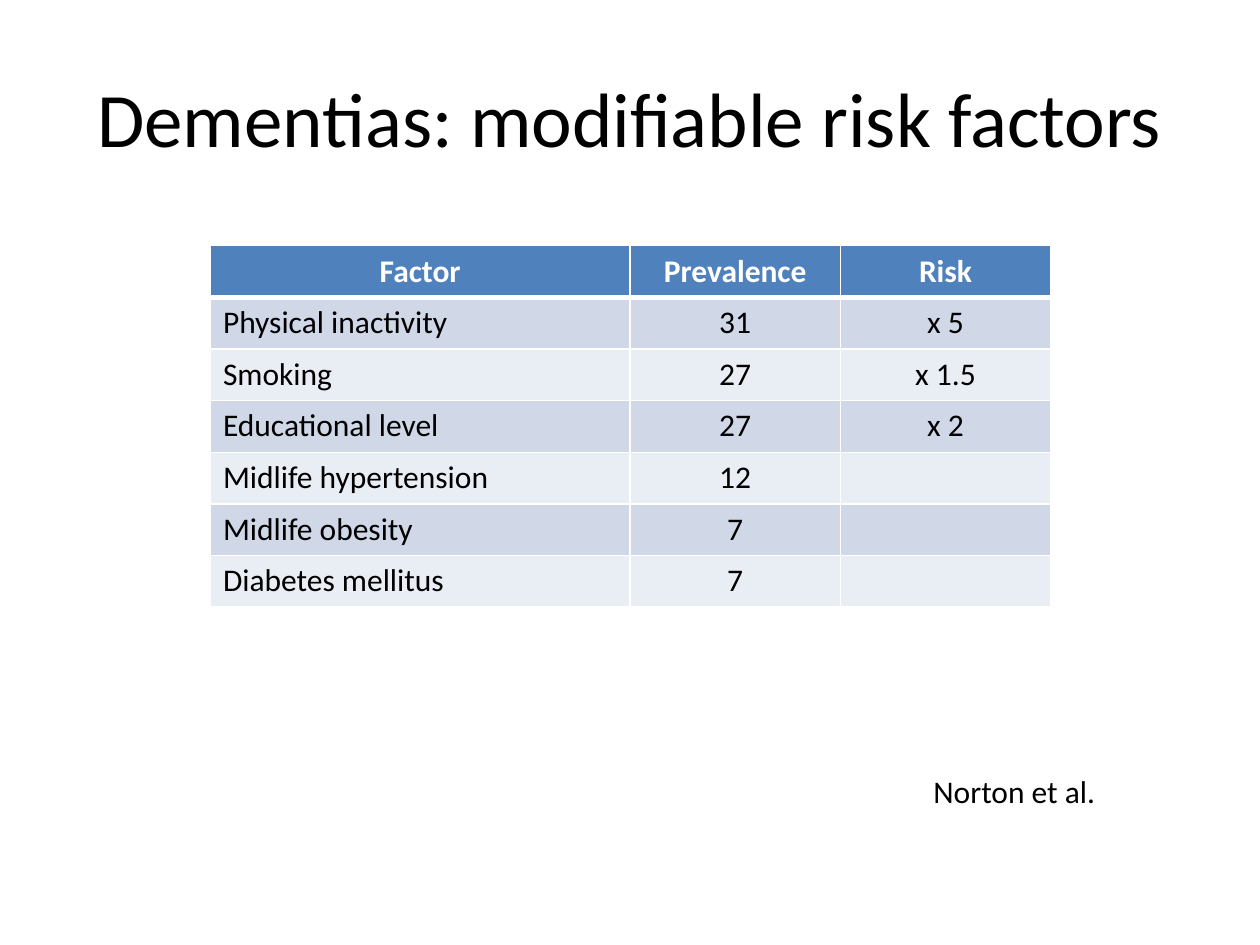
from typing import NamedTuple

from lxml import etree
from pptx import Presentation
from pptx import util as u
from pptx.dml.color import RGBColor
from pptx.enum import text
from pptx.oxml import ns

FONT = "Calibri"
BLACK, WHITE = "000000", "FFFFFF"
HEADER_FILL = "4F81BD"
BAND_FILLS = ("D0D8E8", "E9EDF4")
LEFT, CENTER = text.PP_ALIGN.LEFT, text.PP_ALIGN.CENTER


class RiskFactor(NamedTuple):
    name: str
    prevalence: str
    risk: str = ""


HEADER = RiskFactor("Factor", "Prevalence", "Risk")
FACTORS = [
    RiskFactor("Physical inactivity", "31", "x 5"),
    RiskFactor("Smoking", "27", "x 1.5"),
    RiskFactor("Educational level", "27", "x 2"),
    RiskFactor("Midlife hypertension", "12"),
    RiskFactor("Midlife obesity", "7"),
    RiskFactor("Diabetes mellitus", "7"),
]
COLUMN_WIDTHS = (3.33, 1.67, 1.67)
ROW_HEIGHT = 0.41


def rgb(color: str) -> RGBColor:
    return RGBColor.from_string(color)


def write_text(frame, content: str, *, size: float = 18, color: str = BLACK,
               bold: bool = False, align=LEFT) -> None:
    paragraph = frame.paragraphs[0]
    paragraph.alignment = align
    paragraph.font.size = u.Pt(size)
    if not content:
        return
    run = paragraph.add_run()
    run.text = content
    run.font.name = FONT
    run.font.size = u.Pt(size)
    run.font.bold = bold
    run.font.color.rgb = rgb(color)


def add_borders(cell, top: float, bottom: float) -> None:
    """Draw white cell borders; must run before the cell gets its fill."""
    properties = cell._tc.get_or_add_tcPr()
    for side, width in (("L", 1), ("R", 1), ("T", top), ("B", bottom)):
        line = etree.SubElement(properties, ns.qn(f"a:ln{side}"), w=str(u.Pt(width)))
        fill = etree.SubElement(line, ns.qn("a:solidFill"))
        etree.SubElement(fill, ns.qn("a:srgbClr"), val=WHITE)


def add_factor_table(slide, left: float, top: float) -> None:
    records = [HEADER, *FACTORS]
    frame = slide.shapes.add_table(
        len(records), len(COLUMN_WIDTHS), u.Inches(left), u.Inches(top),
        u.Inches(sum(COLUMN_WIDTHS)), u.Inches(ROW_HEIGHT * len(records)))
    table = frame.table
    for column, width in zip(table.columns, COLUMN_WIDTHS):
        column.width = u.Inches(width)
    for row_index, record in enumerate(records):
        table.rows[row_index].height = u.Inches(ROW_HEIGHT)
        is_header = row_index == 0
        fill = HEADER_FILL if is_header else BAND_FILLS[(row_index - 1) % 2]
        for column_index, content in enumerate(record):
            cell = table.cell(row_index, column_index)
            add_borders(cell, top=3 if row_index == 1 else 1,
                        bottom=3 if is_header else 1)
            cell.fill.solid()
            cell.fill.fore_color.rgb = rgb(fill)
            write_text(cell.text_frame, content, bold=is_header,
                       color=WHITE if is_header else BLACK,
                       align=CENTER if is_header or column_index else LEFT)


def main() -> None:
    presentation = Presentation()
    presentation.slide_width = u.Inches(10)
    presentation.slide_height = u.Inches(7.5)
    slide = presentation.slides.add_slide(presentation.slide_layouts[5])

    title = slide.shapes.title
    title.left, title.top = u.Inches(0.5), u.Inches(0.3)
    title.width, title.height = u.Inches(9), u.Inches(1.25)
    title.text_frame.vertical_anchor = text.MSO_ANCHOR.MIDDLE
    write_text(title.text_frame, "Dementias: modifiable risk factors",
               size=44, align=CENTER)

    add_factor_table(slide, left=1.67, top=1.95)

    citation = slide.shapes.add_textbox(
        u.Inches(7.31), u.Inches(6.08), u.Inches(1.77), u.Inches(0.4))
    citation.text_frame.word_wrap = True
    citation.text_frame.auto_size = text.MSO_AUTO_SIZE.SHAPE_TO_FIT_TEXT
    write_text(citation.text_frame, "Norton et al.")

    presentation.save("out.pptx")


if __name__ == "__main__":
    main()
